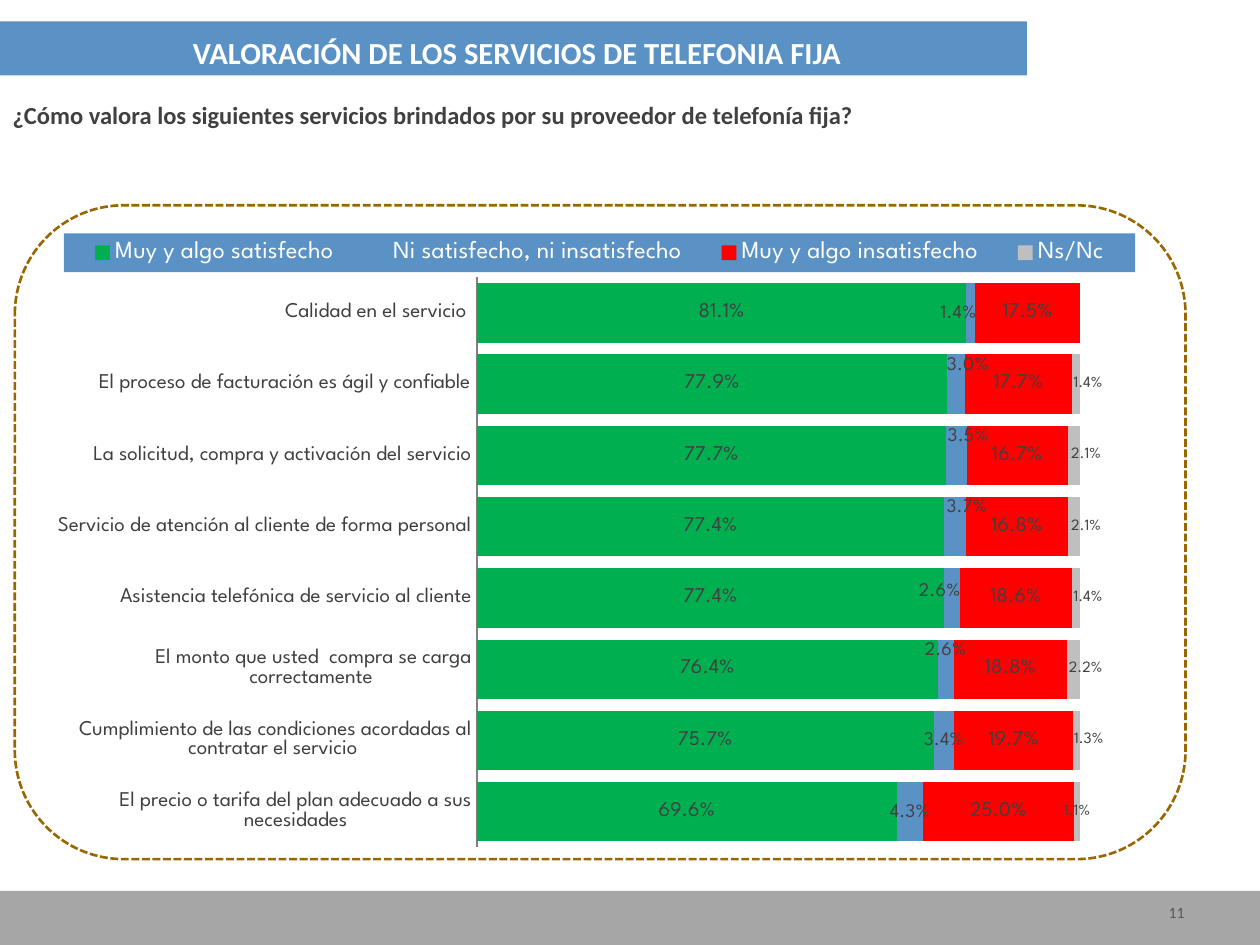
from lxml import etree
from pptx import Presentation
from pptx.chart.data import CategoryChartData
from pptx.dml.color import RGBColor
from pptx.enum.chart import XL_CHART_TYPE, XL_LEGEND_POSITION, XL_TICK_MARK
from pptx.enum.dml import MSO_LINE
from pptx.enum.shapes import MSO_SHAPE
from pptx.enum.text import MSO_ANCHOR, MSO_AUTO_SIZE, PP_ALIGN
from pptx.oxml import parse_xml
from pptx.oxml.ns import nsdecls, qn
from pptx.util import Cm, Pt

STACKED = XL_CHART_TYPE.BAR_STACKED
TOP = XL_LEGEND_POSITION.TOP
NO_TICK = XL_TICK_MARK.NONE
DASH = MSO_LINE.SQUARE_DOT
RECTANGLE, ROUNDED = MSO_SHAPE.RECTANGLE, MSO_SHAPE.ROUNDED_RECTANGLE
BOTTOM, UPPER, MIDDLE = MSO_ANCHOR.BOTTOM, MSO_ANCHOR.TOP, MSO_ANCHOR.MIDDLE
LEFT, CENTER, RIGHT = PP_ALIGN.LEFT, PP_ALIGN.CENTER, PP_ALIGN.RIGHT

COLORS = {"blue": "5A92C5", "footer": "A6A6A6", "white": "FFFFFF", "text": "404040",
          "number": "595959", "axis": "808080", "frame": "996600", "green": "00B050",
          "red": "FF0000", "gray": "BFBFBF"}
CHART_FONT = "League Spartan"
PERCENT = "###0.0%"


def style_font(font, name, size, color, bold=False):
    for key, value in {"name": name, "size": Pt(size), "bold": bold}.items():
        setattr(font, key, value)
    font.color.rgb = RGBColor.from_string(COLORS[color])


def manual_layout(**values):
    entries = "".join(f'<c:{key} val="{value}"/>' for key, value in values.items())
    return parse_xml(f'<c:layout {nsdecls("c")}><c:manualLayout>{entries}'
                     '</c:manualLayout></c:layout>')


deck = Presentation()
deck.slide_width, deck.slide_height = Cm(25.4), Cm(19.05)
page = deck.slides.add_slide(deck.slide_layouts[1])

bars = [("blue", 0.43, 20.7), ("footer", 17.96, 25.4)]
for order, (color, top, width) in enumerate(bars):
    bar = page.shapes.add_shape(RECTANGLE, 0, Cm(top), Cm(width), Cm(1.09))
    bar.shadow.inherit = False
    bar.fill.solid()
    bar.fill.fore_color.rgb = RGBColor.from_string(COLORS[color])
    bar.line.fill.background()
    page.shapes._spTree.insert(2 + order, bar._element)

number_box = page.shapes.add_textbox(0, 0, Cm(1), Cm(1))
texts = [
    (page.shapes.title, (-0.3, 0.46, 21.46, 1.09),
     "VALORACIÓN DE LOS SERVICIOS DE TELEFONIA FIJA",
     BOTTOM, CENTER, 0.8, 17.5, "white", True),
    (page.placeholders[1], (0, 1.96, 25.35, 1.35),
     "¿Cómo valora los siguientes servicios brindados por su proveedor de telefonía fija?",
     UPPER, LEFT, 0.9, 14, "text", True),
    (number_box, (18.21, 17.88, 5.92, 1.02), "11", MIDDLE, RIGHT, 1, 9, "number", False),
]
for box, place, words, anchor, align, spacing, size, color, bold in texts:
    box.left, box.top, box.width, box.height = map(Cm, place)
    frame = box.text_frame
    frame.text = words
    settings = {"word_wrap": True, "auto_size": MSO_AUTO_SIZE.NONE, "vertical_anchor": anchor}
    for key, value in settings.items():
        setattr(frame, key, value)
    para = frame.paragraphs[0]
    paragraph_format = {"alignment": align, "line_spacing": spacing, "space_before": Pt(0)}
    for key, value in paragraph_format.items():
        setattr(para, key, value)
    properties = para._p.get_or_add_pPr()
    properties.set("marL", "0")
    properties.set("indent", "0")
    etree.SubElement(properties, qn("a:buNone"))
    style_font(para.runs[0].font, "Calibri", size, color, bold)

data = CategoryChartData(number_format=PERCENT)
data.categories = [
    "Calidad en el servicio ",
    "El proceso de facturación es ágil y confiable",
    "La solicitud, compra y activación del servicio",
    "Servicio de atención al cliente de forma personal",
    "Asistencia telefónica de servicio al cliente",
    "El monto que usted  compra se carga correctamente ",
    "Cumplimiento de las condiciones acordadas al contratar el servicio ",
    "El precio o tarifa del plan adecuado a sus necesidades",
]
ratings = [
    ("Muy y algo satisfecho", "green", 12,
     [0.811, 0.779, 0.777, 0.774, 0.774, 0.764, 0.757, 0.696], {}),
    ("Ni satisfecho, ni insatisfecho", "blue", 11,
     [0.014, 0.03, 0.035, 0.037, 0.026, 0.026, 0.034, 0.043],
     {0: (-0.01, 0), 1: (0.01, -0.03), 2: (0.01, -0.03), 3: (0.01, -0.03),
      4: (-0.01, -0.01), 5: (0, -0.03)}),
    ("Muy y algo insatisfecho", "red", 12,
     [0.175, 0.177, 0.167, 0.168, 0.186, 0.188, 0.197, 0.25], {}),
    ("Ns/Nc", "gray", 9,
     [None, 0.014, 0.021, 0.021, 0.014, 0.022, 0.013, 0.011],
     {point: (0.01, 0) for point in range(1, 7)}),
]
for name, color, size, values, shifts in ratings:
    data.add_series(name, values)

chart = page.shapes.add_chart(STACKED, Cm(0.71), Cm(4.5), Cm(24), Cm(12.83), data).chart
style_font(chart.font, "Calibri", 10, "text")
chart.has_title = False
plot = chart.plots[0]
for key, value in {"gap_width": 20, "overlap": 100, "vary_by_categories": False}.items():
    setattr(plot, key, value)

for series, (name, color, size, values, shifts) in zip(plot.series, ratings):
    series.format.fill.solid()
    series.format.fill.fore_color.rgb = RGBColor.from_string(COLORS[color])
    labels = series.data_labels
    label_format = {"show_value": True, "number_format": PERCENT,
                    "number_format_is_linked": False}
    for key, value in label_format.items():
        setattr(labels, key, value)
    style_font(labels.font, CHART_FONT, size, "text")
    for point, (across, down) in shifts.items():
        style_font(series.points[point].data_label.font, CHART_FONT, size, "text")
    for label in series._element.findall(".//" + qn("c:dLbl")):
        index = label.find(qn("c:idx"))
        across, down = shifts[int(index.get("val"))]
        index.addnext(manual_layout(x=across, y=down))

category_axis = chart.category_axis
for key, value in {"reverse_order": True, "major_tick_mark": NO_TICK,
                   "minor_tick_mark": NO_TICK, "has_major_gridlines": False}.items():
    setattr(category_axis, key, value)
style_font(category_axis.tick_labels.font, CHART_FONT, 12, "text")
category_axis.format.line.color.rgb = RGBColor.from_string(COLORS["axis"])
category_axis.format.line.width = Pt(0.75)
for key, value in {"minimum_scale": 0, "maximum_scale": 1, "visible": False,
                   "has_major_gridlines": False}.items():
    setattr(chart.value_axis, key, value)

chart.has_legend = True
legend = chart.legend
legend.position = TOP
legend.include_in_layout = False
style_font(legend.font, CHART_FONT, 14, "white")
legend_element = legend._element
for old in legend_element.findall(qn("c:layout")):
    legend_element.remove(old)
legend_element.find(qn("c:legendPos")).addnext(
    manual_layout(xMode="edge", yMode="edge", x=0.024, y=0.016, w=0.9, h=0.061))
legend_element.find(qn("c:txPr")).addprevious(parse_xml(
    f'<c:spPr {nsdecls("c", "a")}><a:solidFill><a:srgbClr val="{COLORS["blue"]}"/>'
    '</a:solidFill></c:spPr>'))

plot_area = plot._element.getparent()
for old in plot_area.findall(qn("c:layout")):
    plot_area.remove(old)
plot_area.insert(0, manual_layout(layoutTarget="inner", xMode="edge", yMode="edge",
                                  x=0.371, y=0.085, w=0.507, h=0.896))

border = page.shapes.add_shape(ROUNDED, Cm(0.3), Cm(4.14), Cm(23.6), Cm(13.18))
border.shadow.inherit = False
border.fill.background()
border.line.color.rgb = RGBColor.from_string(COLORS["frame"])
border.line.width = Pt(1.5)
border.line.dash_style = DASH

deck.save("out.pptx")
